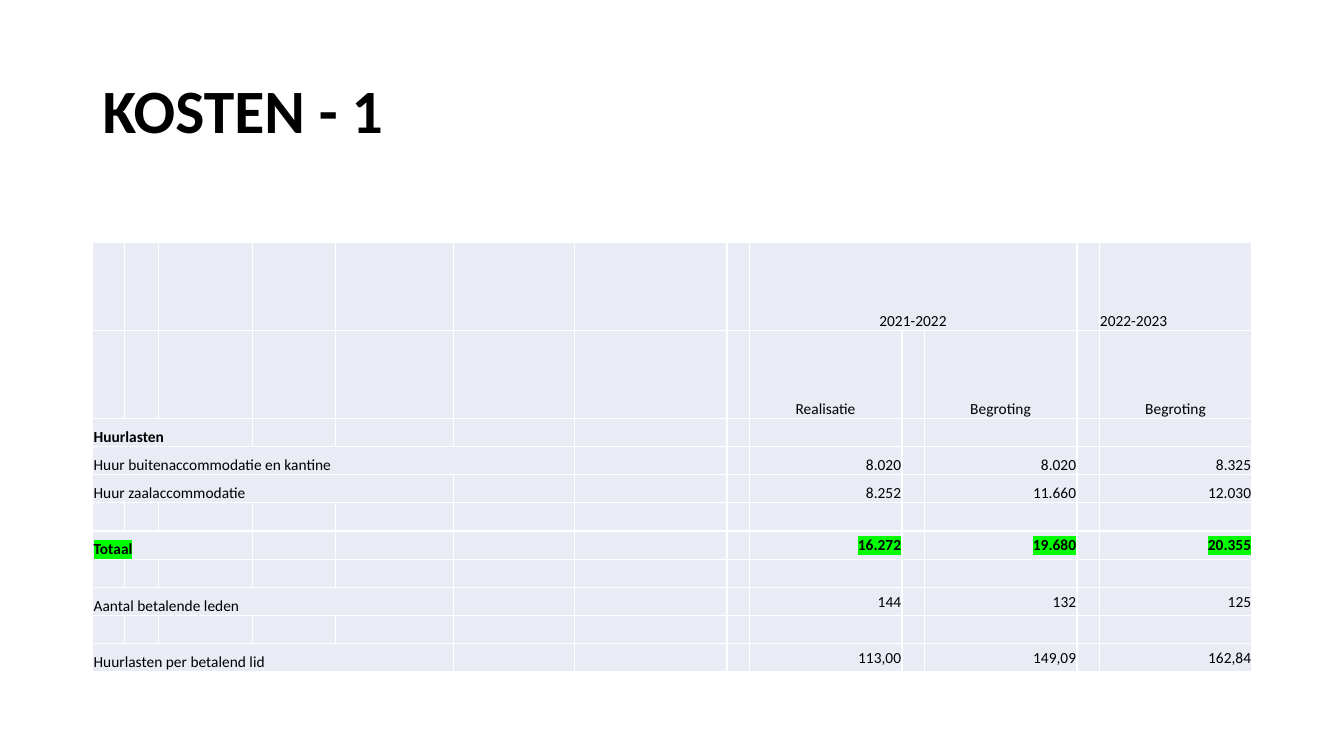
from dataclasses import dataclass

from lxml.etree import SubElement as Sub, Element as Elem
from pptx import Presentation
from pptx.dml.color import RGBColor as Rgb
from pptx.enum.text import MSO_ANCHOR as Anchor, PP_ALIGN as Align
from pptx.oxml.ns import qn
from pptx.util import Cm, Pt


@dataclass(frozen=True)
class Theme:
    font: str = "Calibri"
    ink: str = "000000"
    cell: str = "E9EBF5"
    rule: str = "FFFFFF"
    mark: str = "00FF00"
    head: int = 44
    body: int = 11


THEME = Theme()
LEFT, WIDTH = 2.34, 29.21
YEAR, GAP = 3.85, 0.56
COLS = [0.8, 0.85, 2.37, 2.1, 2.97, 3.04, YEAR] + [GAP, YEAR] * 3
ROWS = [2.21] * 2 + [0.71] * 9
SUMS = (8, 10, 12)

COSTS = [
    (2, "Huurlasten", 3, (), Anchor.BOTTOM, True, None),
    (3, "Huur buitenaccommodatie en kantine", 6, ("8.020", "8.020", "8.325"), Anchor.BOTTOM, False, None),
    (4, "Huur zaalaccommodatie", 5, ("8.252", "11.660", "12.030"), Anchor.BOTTOM, False, None),
    (6, "Totaal", 3, ("16.272", "19.680", "20.355"), Anchor.MIDDLE, True, THEME.mark),
    (8, "Aantal betalende leden", 5, ("144", "132", "125"), Anchor.MIDDLE, False, None),
    (10, "Huurlasten per betalend lid", 5, ("113,00", "149,09", "162,84"), Anchor.MIDDLE, False, None),
]


def assign(item, **props):
    for name, value in props.items():
        setattr(item, name, value)


def write(para, text, size, bold=False, mark=None):
    run = para.add_run()
    run.text = text
    assign(run.font, size=Pt(size), bold=bold, name=THEME.font)
    run.font.color.rgb = Rgb.from_string(THEME.ink)
    if mark:
        light = Elem(qn("a:highlight"))
        Sub(light, qn("a:srgbClr"), val=mark)
        run.font.fill._xPr.find(qn("a:solidFill")).addnext(light)


def add_title(slide, text):
    box = slide.shapes.add_textbox(Cm(LEFT), Cm(1.01), Cm(WIDTH), Cm(3.68))
    frame = box.text_frame
    assign(frame, word_wrap=True, vertical_anchor=Anchor.MIDDLE)
    para = frame.paragraphs[0]
    para.line_spacing = 0.9
    write(para, text, THEME.head, True)


def dress(cell):
    inset = Cm(0.02)
    assign(cell, margin_left=inset, margin_right=inset, margin_top=inset, margin_bottom=0)
    props = cell._tc.get_or_add_tcPr()
    for side in ("lnL", "lnR", "lnT", "lnB"):
        line = Sub(props, qn("a:" + side), w=str(Pt(1)))
        fill = Sub(line, qn("a:solidFill"))
        Sub(fill, qn("a:srgbClr"), val=THEME.rule)
    cell.fill.solid()
    cell.fill.fore_color.rgb = Rgb.from_string(THEME.cell)
    para = cell.text_frame.paragraphs[0]
    Sub(para._p, qn("a:endParaRPr"), sz=str(THEME.body * 100))


def add_grid(slide):
    frame = slide.shapes.add_table(
        len(ROWS), len(COLS), Cm(LEFT), Cm(6.12), Cm(WIDTH), Cm(sum(ROWS)))
    grid = frame.table
    assign(grid, first_row=False, horz_banding=False)
    for col, width in zip(grid.columns, COLS):
        col.width = Cm(width)
    for row, height in zip(grid.rows, ROWS):
        row.height = Cm(height)
    for cell in grid.iter_cells():
        dress(cell)
    return grid


def put(grid, row, col, text, align=Align.LEFT, span=1, anchor=Anchor.BOTTOM, **style):
    cell = grid.cell(row, col)
    if span > 1:
        cell.merge(grid.cell(row, col + span - 1))
    cell.vertical_anchor = anchor
    para = cell.text_frame.paragraphs[0]
    para.alignment = align
    write(para, text, THEME.body, **style)


def fill_grid(grid):
    put(grid, 0, 8, "2021-2022", Align.CENTER, 3)
    put(grid, 0, 12, "2022-2023")
    for col, text in zip(SUMS, ("Realisatie", "Begroting", "Begroting")):
        put(grid, 1, col, text, Align.CENTER)
    for row, label, span, sums, anchor, bold, mark in COSTS:
        put(grid, row, 0, label, span=span, bold=bold, mark=mark)
        for col, text in zip(SUMS, sums):
            put(grid, row, col, text, Align.RIGHT, anchor=anchor, bold=bold, mark=mark)


def main():
    deck = Presentation()
    assign(deck, slide_width=Cm(33.87), slide_height=Cm(19.05))
    slide = deck.slides.add_slide(deck.slide_layouts[6])
    add_title(slide, "KOSTEN - 1")
    fill_grid(add_grid(slide))
    deck.save("out.pptx")


if __name__ == "__main__":
    main()
